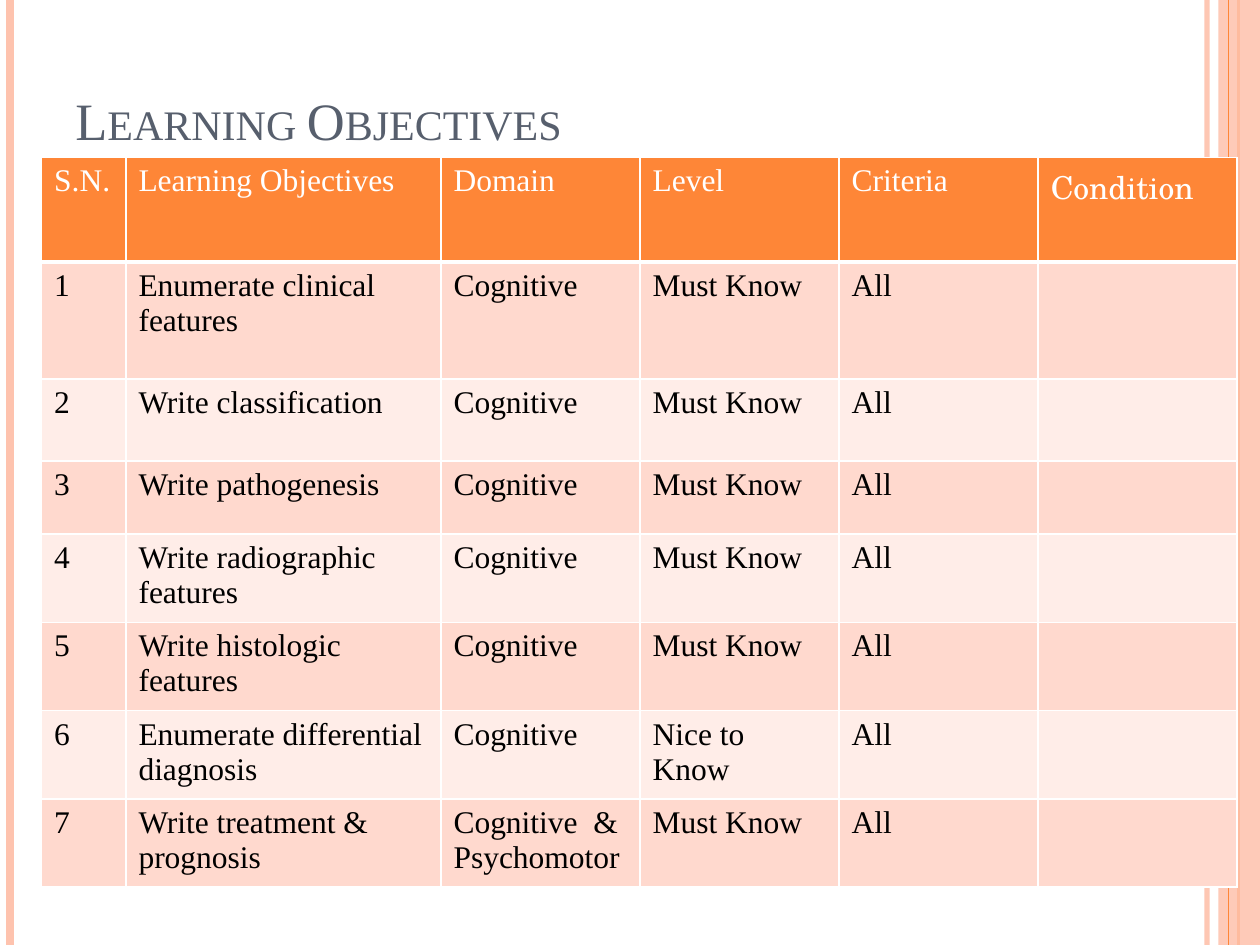
import lxml.etree
import pptx
import pptx.dml.color
import pptx.enum.shapes
import pptx.enum.text
import pptx.oxml.ns
import pptx.util

Inches = pptx.util.Inches
qn = pptx.oxml.ns.qn

THEME = {
    "font": "Times New Roman", "accent_font": "TeX Gyre Schola",
    "title_size": 30, "table_size": 18,
    "title": "575F6D", "orange": "FE8637", "peach": "FEC3AE",
    "white": "FFFFFF", "black": "000000",
    "bands": ("FFD9CE", "FFEDE8"),
}

TITLE = "Learning Objectives"
HEADINGS = ["S.N.", "Learning Objectives", "Domain", "Level", "Criteria", "Condition"]
# Objective, domain, level, row height
OBJECTIVES = [
    ("Enumerate clinical features", "Cognitive", "Must Know", 0.93),
    ("Write classification", "Cognitive", "Must Know", 0.65),
    ("Write pathogenesis", "Cognitive", "Must Know", 0.58),
    ("Write radiographic features", "Cognitive", "Must Know", 0.65),
    ("Write histologic features", "Cognitive", "Must Know", 0.65),
    ("Enumerate differential diagnosis", "Cognitive", "Nice to Know", 0.65),
    ("Write treatment & prognosis", "Cognitive  & Psychomotor", "Must Know", 0.65),
]
CRITERIA = "All"
HEADER_HEIGHT = 0.83
COLUMN_WIDTHS = [0.67, 2.5] + [1.58] * 4

# x, colour, width in points, opacity in percent
BACK_STRIPES = [(9.58, "peach", 3, 93), (0.08, "peach", 4.5, 100), (9.83, "orange", 1.5, 100)]
FRONT_STRIPES = [(9.75, "orange", 0.75, 100)]
SIDE_BAR = (9.67, 0, 0.33, 7.5)
SIDE_BAR_OPACITY = 87


def rgb(value):
    return pptx.dml.color.RGBColor.from_string(value)


def set_opacity(fill, percent):
    color = fill._xPr.find(qn("a:solidFill"))[0]
    lxml.etree.SubElement(color, qn("a:alpha")).set("val", str(percent * 1000))


def write_text(frame, text, size, color, font=THEME["font"], small_caps=False):
    span = frame.paragraphs[0].add_run()
    span.text = text
    span.font.size = pptx.util.Pt(size)
    span.font.name = font
    span.font.color.rgb = rgb(color)
    if small_caps:
        span.font._element.set("cap", "small")


def add_stripes(slide, stripes):
    for x, color, width, opacity in stripes:
        stripe = slide.shapes.add_connector(
            pptx.enum.shapes.MSO_CONNECTOR.STRAIGHT,
            Inches(x), Inches(0), Inches(x), Inches(7.5))
        stripe.line.color.rgb = rgb(THEME[color])
        stripe.line.width = pptx.util.Pt(width)
        if opacity < 100:
            set_opacity(stripe.line.fill, opacity)
        lxml.etree.SubElement(stripe._element.spPr, qn("a:effectLst"))


def add_side_bar(slide):
    bar = slide.shapes.add_shape(
        pptx.enum.shapes.MSO_SHAPE.RECTANGLE, *map(Inches, SIDE_BAR))
    bar.shadow.inherit = False
    bar.fill.solid()
    bar.fill.fore_color.rgb = rgb(THEME["peach"])
    set_opacity(bar.fill, SIDE_BAR_OPACITY)
    bar.line.fill.background()


def add_title(slide):
    box = slide.shapes.add_textbox(Inches(0.5), Inches(0), Inches(9), Inches(1.25))
    box.text_frame.word_wrap = True
    box.text_frame.vertical_anchor = pptx.enum.text.MSO_ANCHOR.BOTTOM
    write_text(box.text_frame, TITLE, size=THEME["title_size"],
               color=THEME["title"], small_caps=True)


def set_borders(cell, bottom):
    properties = cell._tc.get_or_add_tcPr()
    for side, width in (("L", 1), ("R", 1), ("T", 1), ("B", bottom)):
        border = lxml.etree.SubElement(properties, qn(f"a:ln{side}"))
        border.set("w", str(pptx.util.Pt(width)))
        fill = lxml.etree.SubElement(border, qn("a:solidFill"))
        lxml.etree.SubElement(fill, qn("a:srgbClr")).set("val", THEME["white"])


def add_objectives_table(slide):
    rows = [HEADINGS]
    for number, (objective, domain, level, _) in enumerate(OBJECTIVES, 1):
        rows.append([str(number), objective, domain, level, CRITERIA, ""])
    heights = [HEADER_HEIGHT] + [entry[-1] for entry in OBJECTIVES]
    table = slide.shapes.add_table(
        len(rows), len(COLUMN_WIDTHS), Inches(0.33), Inches(1.25),
        Inches(sum(COLUMN_WIDTHS)), Inches(sum(heights))).table
    for column, width in zip(table.columns, COLUMN_WIDTHS):
        column.width = Inches(width)
    for row_index, (texts, height) in enumerate(zip(rows, heights)):
        table.rows[row_index].height = Inches(height)
        header = row_index == 0
        fill = THEME["orange"] if header else THEME["bands"][(row_index - 1) % 2]
        for column_index, text in enumerate(texts):
            cell = table.cell(row_index, column_index)
            set_borders(cell, bottom=3 if header else 1)
            cell.fill.solid()
            cell.fill.fore_color.rgb = rgb(fill)
            if text:
                write_text(cell.text_frame, text, size=THEME["table_size"],
                           color=THEME["white" if header else "black"],
                           font=THEME["accent_font" if text == "Condition" else "font"])


def main():
    deck = pptx.Presentation()
    deck.slide_width, deck.slide_height = Inches(10), Inches(7.5)
    slide = deck.slides.add_slide(deck.slide_layouts[6])
    add_stripes(slide, BACK_STRIPES)
    add_side_bar(slide)
    add_stripes(slide, FRONT_STRIPES)
    add_title(slide)
    add_objectives_table(slide)
    deck.save("out.pptx")


if __name__ == "__main__":
    main()
